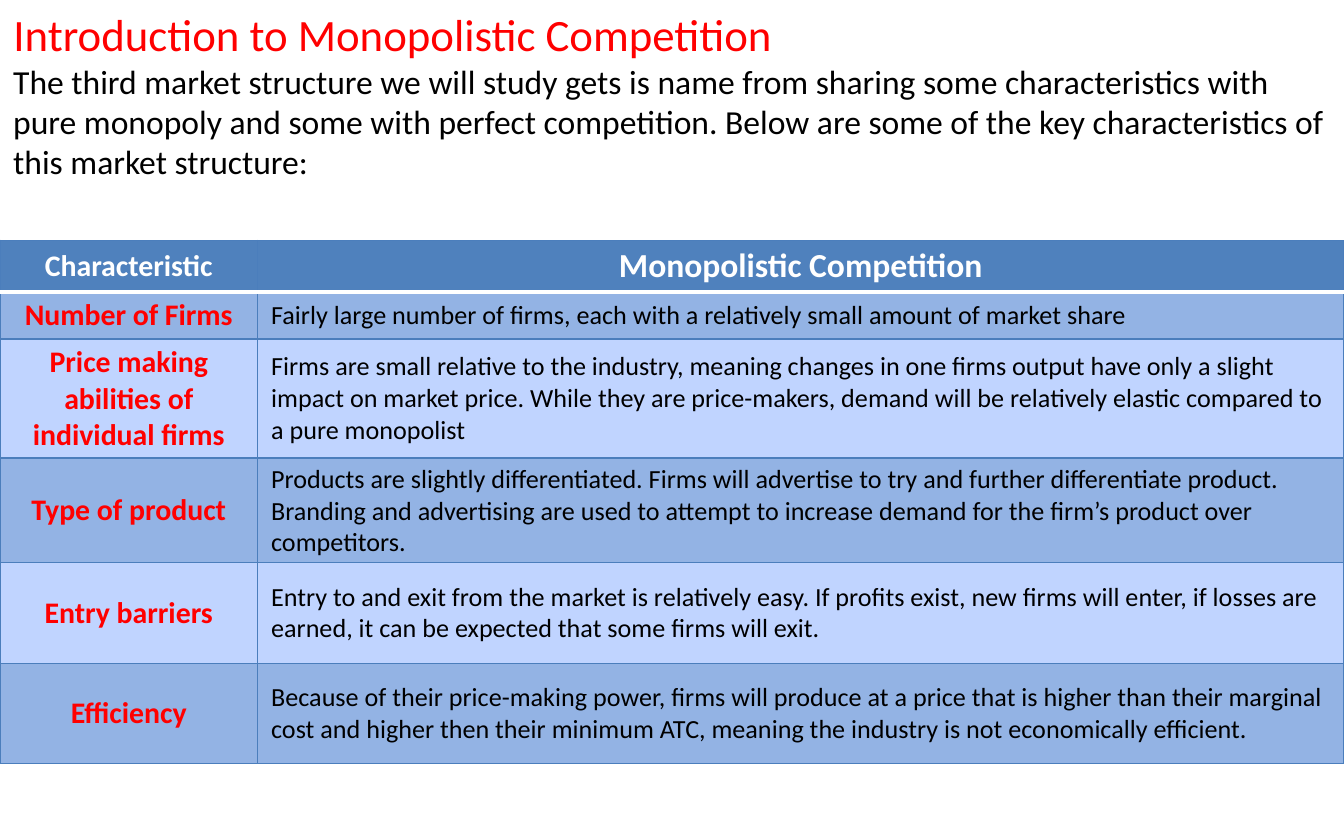
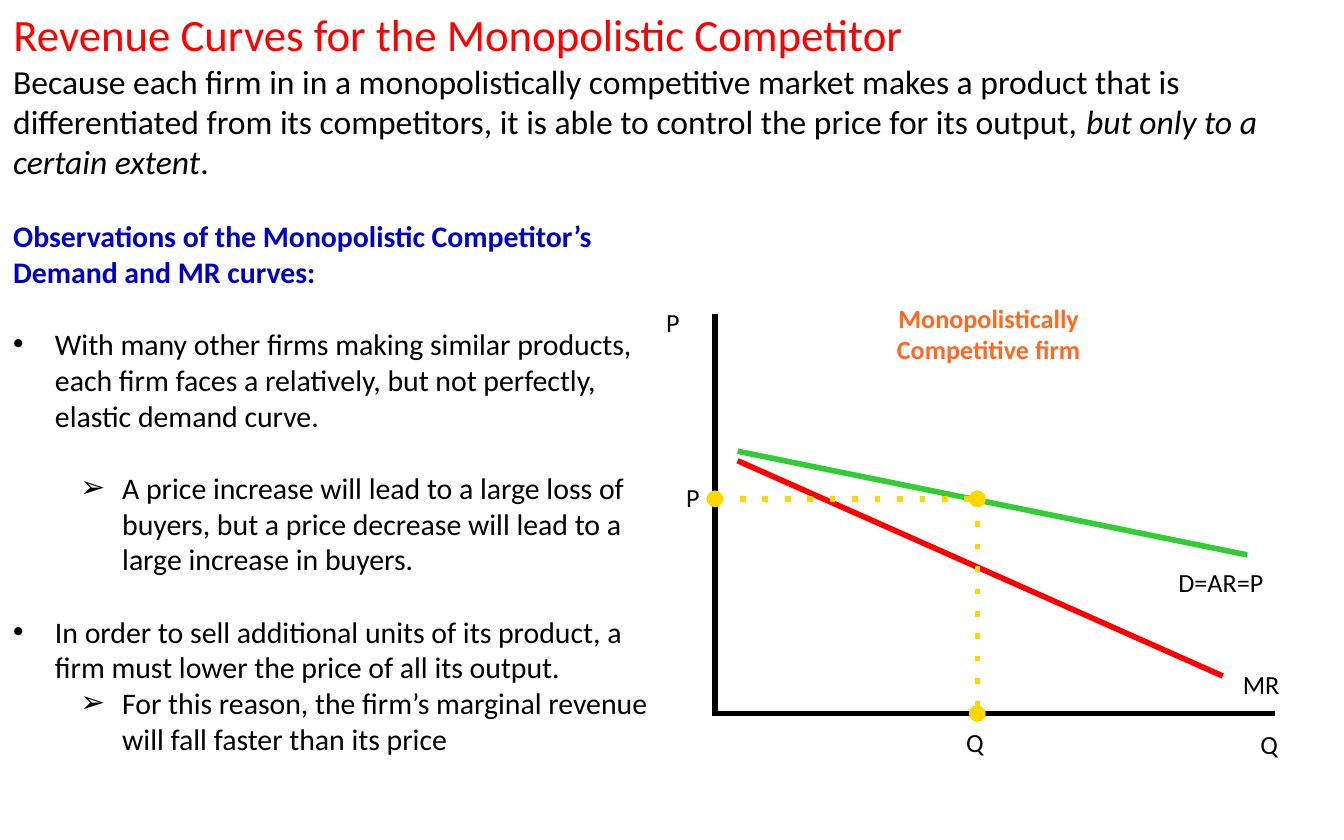
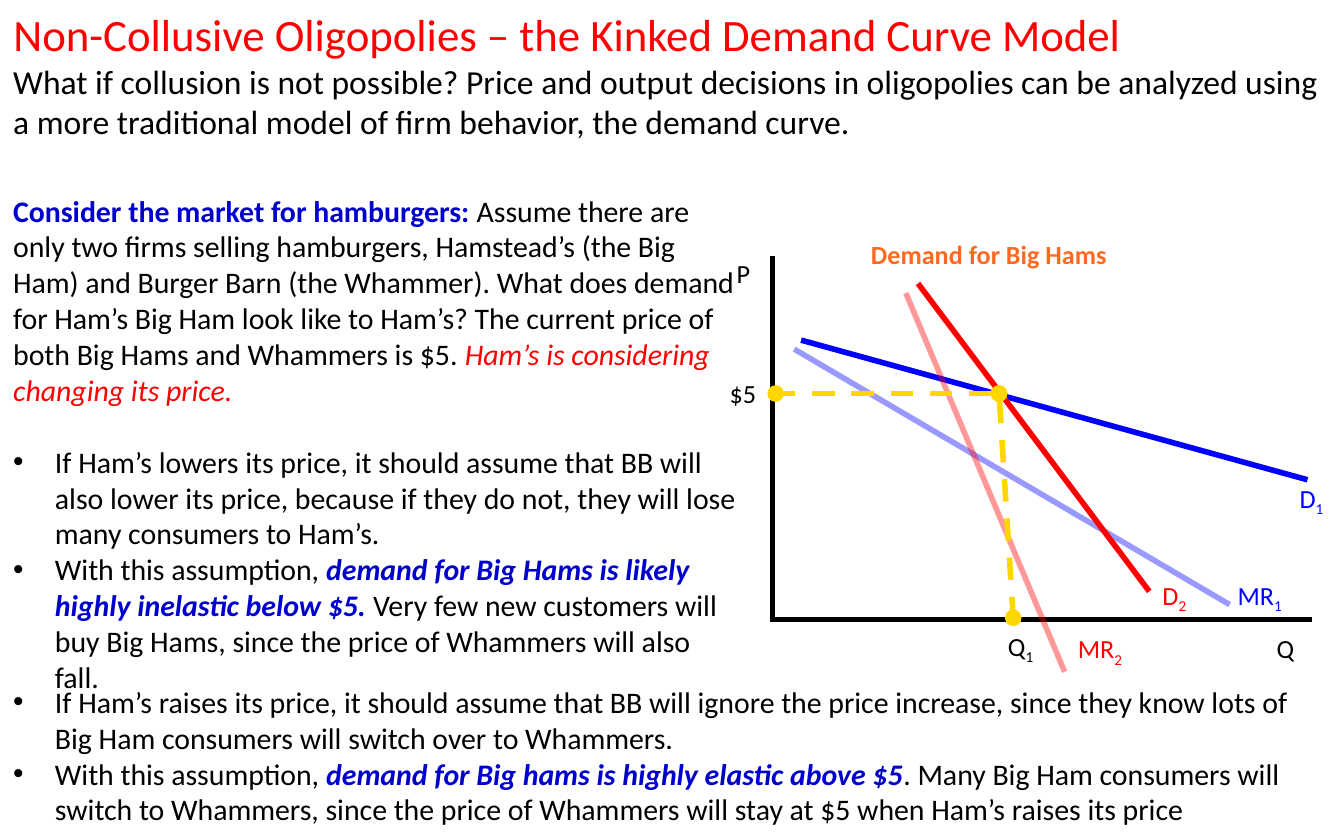
from dataclasses import dataclass

from lxml.etree import SubElement
from pptx import Presentation
from pptx.dml.color import RGBColor
from pptx.enum.shapes import MSO_CONNECTOR
from pptx.enum.text import MSO_ANCHOR, MSO_AUTO_SIZE, PP_ALIGN
from pptx.oxml import parse_xml
from pptx.oxml.ns import nsdecls, qn
from pptx.util import Cm, Pt

FONT = "Calibri"
BLACK, WHITE, RED, BLUE, NAVY = "000000", "FFFFFF", "FF0000", "0000FF", "0000CC"
ORANGE, GREEN, GOLD = "FF6820", "32CD32", "FFD700"
HEADER, BAND_DARK, BAND_LIGHT, BORDER = "4F81BD", "93B3E4", "C0D4FF", "4B7EBC"
PAGE_WIDTH, PAGE_HEIGHT = 25.4, 15.88
TITLE_HEIGHT = 1.15
BULLETS = ("•", "➢")
BODY_SIZE = 16
BODY_LINE = 19.5

HEADING = {"bold": True, "color": NAVY}
STRESS = {"bold": True, "italic": True, "color": NAVY}
ITALIC = {"italic": True}
SUBSCRIPT = {"baseline": -25000}


@dataclass
class Block:
    """A paragraph: spans are strings or (string, style) pairs; level sets a bullet."""
    spans: list
    level: int = None
    gap: float = 0
    align: PP_ALIGN = PP_ALIGN.LEFT


def rgb(color):
    return RGBColor.from_string(color)


def set_attributes(target, values):
    for name, value in values.items():
        setattr(target, name, value)


def add_bullet(para, level):
    properties = para._p.get_or_add_pPr()
    properties.set("marL", str(Cm(0.79 + 1.27 * level)))
    properties.set("indent", str(-Cm(0.79)))
    SubElement(properties, qn("a:buFont"), typeface="Arial")
    SubElement(properties, qn("a:buChar"), char=BULLETS[level])


def write(frame, blocks, size, **style):
    for index, block in enumerate(blocks):
        para = frame.paragraphs[0] if index == 0 else frame.add_paragraph()
        set_attributes(para, {"alignment": block.align, "space_before": Pt(block.gap)})
        if block.level is not None:
            add_bullet(para, block.level)
        for item in block.spans:
            text, own = (item, {}) if isinstance(item, str) else item
            values = {"name": FONT, "size": Pt(size), "bold": False,
                      "italic": False, "color": BLACK, **style, **own}
            span = para.add_run()
            span.text = text
            span.font.color.rgb = rgb(values.pop("color"))
            baseline = values.pop("baseline", None)
            set_attributes(span.font, values)
            if baseline:
                span._r.get_or_add_rPr().set("baseline", str(baseline))


def set_borders(cell, colors_widths):
    """Give a cell its left, right, top and bottom borders, in that order."""
    properties = cell._tc.get_or_add_tcPr()
    for index, (side, (color, width)) in enumerate(zip("LRTB", colors_widths)):
        properties.insert(index, parse_xml(
            f'<a:ln{side} {nsdecls("a")} w="{Pt(width)}"><a:solidFill>'
            f'<a:srgbClr val="{color}"/></a:solidFill></a:ln{side}>'))


class Lesson:
    def __init__(self):
        self.deck = Presentation()
        self.deck.slide_width, self.deck.slide_height = Cm(PAGE_WIDTH), Cm(PAGE_HEIGHT)
        self.page = None

    def start(self, title, intro, intro_height):
        """Add a page with its red title and the introduction below it."""
        self.page = self.deck.slides.add_slide(self.deck.slide_layouts[5])
        heading = self.page.shapes.title
        set_attributes(heading, {"left": 0, "top": 0, "width": Cm(PAGE_WIDTH),
                                 "height": Cm(TITLE_HEIGHT)})
        set_attributes(heading.text_frame, {
            "vertical_anchor": MSO_ANCHOR.TOP, "auto_size": MSO_AUTO_SIZE.NONE,
            "margin_top": Cm(0.13), "margin_bottom": 0, "word_wrap": True})
        write(heading.text_frame, [Block([title])], 24, color=RED)
        box = self.text([Block(intro)], 0, TITLE_HEIGHT, PAGE_WIDTH, intro_height, 18)
        box.text_frame.margin_top = 0

    def text(self, blocks, left, top, width, height, size=BODY_SIZE, **style):
        box = self.page.shapes.add_textbox(Cm(left), Cm(top), Cm(width), Cm(height))
        set_attributes(box.text_frame, {"word_wrap": True,
                                        "auto_size": MSO_AUTO_SIZE.SHAPE_TO_FIT_TEXT})
        write(box.text_frame, blocks, size, **style)
        return box

    def label(self, text, left, top, width, color=BLACK, index="", bold=False):
        spans = [text, (index, SUBSCRIPT)] if index else [text]
        self.text([Block(spans)], left, top, width, 0.86, 14, color=color, bold=bold)

    def line(self, x1, y1, x2, y2, color, dash=None, opacity=None):
        """Draw a line; a dashed one gets a dot at each end."""
        line = self.page.shapes.add_connector(
            MSO_CONNECTOR.STRAIGHT, Cm(x1), Cm(y1), Cm(x2), Cm(y2))
        line.line.color.rgb = rgb(color)
        line.line.width = Pt(3)
        properties = line._element.spPr
        SubElement(properties, qn("a:effectLst"))
        outline = properties.find(qn("a:ln"))
        if opacity:
            fill = outline.find(".//" + qn("a:srgbClr"))
            SubElement(fill, qn("a:alpha"), val=str(opacity * 1000))
        if dash:
            SubElement(outline, qn("a:prstDash"), val=dash)
            for end in ("a:headEnd", "a:tailEnd"):
                SubElement(outline, qn(end), type="oval")

    def axes(self, left, top, right, bottom):
        self.line(left, top, left, bottom + 0.05, BLACK)
        self.line(left - 0.05, bottom, right, bottom, BLACK)

    def table(self, rows, top, widths, heights):
        table = self.page.shapes.add_table(
            len(rows), len(widths), 0, Cm(top), Cm(sum(widths)), Cm(sum(heights))).table
        table.horz_banding = False
        for column, width in zip(table.columns, widths):
            column.width = Cm(width)
        for number, (row, height) in enumerate(zip(rows, heights)):
            table.rows[number].height = Cm(height)
            for position, text in enumerate(row):
                self.table_cell(table.cell(number, position), text, number, position)

    def table_cell(self, cell, text, number, position):
        is_header, is_name = number == 0, position == 0
        set_attributes(cell, {"vertical_anchor": MSO_ANCHOR.MIDDLE,
                              "margin_top": Cm(0.1), "margin_bottom": Cm(0.1)})
        cell.fill.solid()
        band = BAND_DARK if number % 2 else BAND_LIGHT
        cell.fill.fore_color.rgb = rgb(HEADER if is_header else band)
        thin, thick = (BORDER, 0.75), (WHITE, 2)
        set_borders(cell, [thin, thin, thick if number == 1 else thin,
                           thick if is_header else thin])
        if is_header:
            size, color = (16 if is_name else 18), WHITE
        else:
            size, color = (16, RED) if is_name else (14, BLACK)
        centred = is_header or is_name
        align = PP_ALIGN.CENTER if centred else PP_ALIGN.LEFT
        write(cell.text_frame, [Block([text], align=align)], size,
              color=color, bold=centred)


def add_introduction(lesson):
    lesson.start(
        "Introduction to Monopolistic Competition",
        ["The third market structure we will study gets is name from sharing some "
         "characteristics with pure monopoly and some with perfect competition. Below are "
         "some of the key characteristics of this market structure:"], 2.42)
    lesson.table([
        ("Characteristic", "Monopolistic Competition"),
        ("Number of Firms",
         "Fairly large number of firms, each with a relatively small amount of market share"),
        ("Price making abilities of individual firms",
         "Firms are small relative to the industry, meaning changes in one firms output have "
         "only a slight impact on market price. While they are price-makers, demand will be "
         "relatively elastic compared to a pure monopolist"),
        ("Type of product",
         "Products are slightly differentiated. Firms will advertise to try and further "
         "differentiate product. Branding and advertising are used to attempt to increase "
         "demand for the firm’s product over competitors."),
        ("Entry barriers",
         "Entry to and exit from the market is relatively easy. If profits exist, new firms "
         "will enter, if losses are earned, it can be expected that some firms will exit."),
        ("Efficiency",
         "Because of their price-making power, firms will produce at a price that is higher "
         "than their marginal cost and higher then their minimum ATC, meaning the industry "
         "is not economically efficient."),
    ], 4.54, (4.87, 20.53), (0.98, 0.89, 2.25, 1.98, 1.9, 1.9))


def add_revenue_curves(lesson):
    lesson.start(
        "Revenue Curves for the Monopolistic Competitor",
        ["Because each firm in in a monopolistically competitive market makes a product that "
         "is differentiated from its competitors, it is able to control the price for its "
         "output, ", ("but only to a certain extent", ITALIC), "."], 2.42)
    lesson.text([
        Block([("Observations of the Monopolistic Competitor’s Demand and MR curves:",
                HEADING)]),
        Block(["With many other firms making similar products, each firm faces a relatively, "
               "but not perfectly, elastic demand curve."], 0, BODY_LINE),
        Block(["A price increase will lead to a large loss of buyers, but a price decrease "
               "will lead to a large increase in buyers."], 1, BODY_LINE),
        Block(["In order to sell additional units of its product, a firm must lower the "
               "price of all its output."], 0, BODY_LINE),
        Block(["For this reason, the firm’s marginal revenue will fall faster than its "
               "price"], 1),
    ], 0, 3.99, 12.7, 11.2)

    axis, base, quantity, price = 13.51, 13.49, 18.47, 9.43
    lesson.axes(axis, 5.94, 24.1, base)
    lesson.label("P", 12.34, 5.66, 1.19)
    lesson.label("Q", 23.57, 13.64, 1.32)
    lesson.label("P", 12.72, 8.97, 1.2)
    lesson.label("Q", 18.01, 13.61, 1.32)
    lesson.label("D=AR=P", 22.02, 10.59, 3.15)
    lesson.label("MR", 23.24, 12.52, 1.75)
    lesson.line(13.94, 8.53, 23.57, 10.49, GREEN)
    lesson.line(13.94, 8.71, 23.11, 12.78, RED)
    lesson.line(quantity, base, quantity, price, GOLD, "dot")
    lesson.line(quantity, price, axis, price, GOLD, "dot")
    lesson.text([Block([line], align=PP_ALIGN.CENTER)
                 for line in ("Monopolistically", "Competitive firm")],
                15.88, 5.59, 5.61, 1.45, 14, color=ORANGE, bold=True)


def add_kinked_demand(lesson):
    lesson.start(
        "Non-Collusive Oligopolies – the Kinked Demand Curve Model",
        ["What if collusion is not possible? Price and output decisions in oligopolies can "
         "be analyzed using a more traditional model of firm behavior, the demand curve."],
        1.66)

    axis, base, quantity, price = 14.6, 11.71, 18.88, 7.44
    lesson.axes(axis, 4.85, 24.79, base)
    lesson.label("P", 13.67, 4.75, 1.14)
    lesson.label("Q", 23.88, 11.84, 1.27)
    lesson.line(15.14, 6.43, 24.71, 9.07, BLUE)
    lesson.label("D", 24.31, 8.99, 1.09, BLUE, "1")
    lesson.line(15.01, 6.6, 23.24, 11.43, BLUE, opacity=40)
    lesson.label("MR", 23.14, 10.82, 1.88, BLUE, "1")
    lesson.line(17.35, 5.36, 21.72, 11.18, RED)
    lesson.line(17.12, 5.54, 20.12, 12.7, RED, opacity=40)
    lesson.label("D", 21.72, 10.82, 1.45, RED, "2")
    lesson.label("MR", 20.12, 11.84, 1.88, RED, "2")
    lesson.label("Demand for Big Hams", 16.21, 4.39, 6.4, ORANGE, bold=True)
    lesson.line(quantity, price, axis + 0.06, price, GOLD, "dash")
    lesson.label("$5", 13.54, 7.01, 1.45)
    lesson.line(quantity, price, 19.15, base - 0.03, GOLD, "dash")
    lesson.label("Q", 18.8, 11.79, 1.32, index="1")

    lesson.text([
        Block([("Consider the market for hamburgers: ", HEADING),
               "Assume there are only two firms selling hamburgers, Hamstead’s (the Big Ham) "
               "and Burger Barn (the Whammer). What does demand for Ham’s Big Ham look like "
               "to Ham’s? The current price of both Big Hams and Whammers is $5. ",
               ("Ham’s is considering changing its price.", {**ITALIC, "color": RED})]),
        Block(["If Ham’s lowers its price, it should assume that BB will also lower its "
               "price, because if they do not, they will lose many consumers to Ham’s."],
              0, BODY_LINE),
        Block(["With this assumption, ",
               ("demand for Big Hams is likely highly inelastic below $5. ", STRESS),
               "Very few new customers will buy Big Hams, since the price of Whammers will "
               "also fall."], 0),
    ], 0, 3.51, 14.25, 9.14)
    lesson.text([
        Block(["If Ham’s raises its price, it should assume that BB will ignore the price "
               "increase, since they know lots of Big Ham consumers will switch over to "
               "Whammers."], 0),
        Block(["With this assumption, ",
               ("demand for Big hams is highly elastic above $5", STRESS),
               ". Many Big Ham consumers will switch to Whammers, since the price of Whammers "
               "will stay at $5 when Ham’s raises its price"], 0),
    ], 0, 12.8, PAGE_WIDTH, 3)


def main():
    lesson = Lesson()
    add_introduction(lesson)
    add_revenue_curves(lesson)
    add_kinked_demand(lesson)
    lesson.deck.save("out.pptx")


if __name__ == "__main__":
    main()
